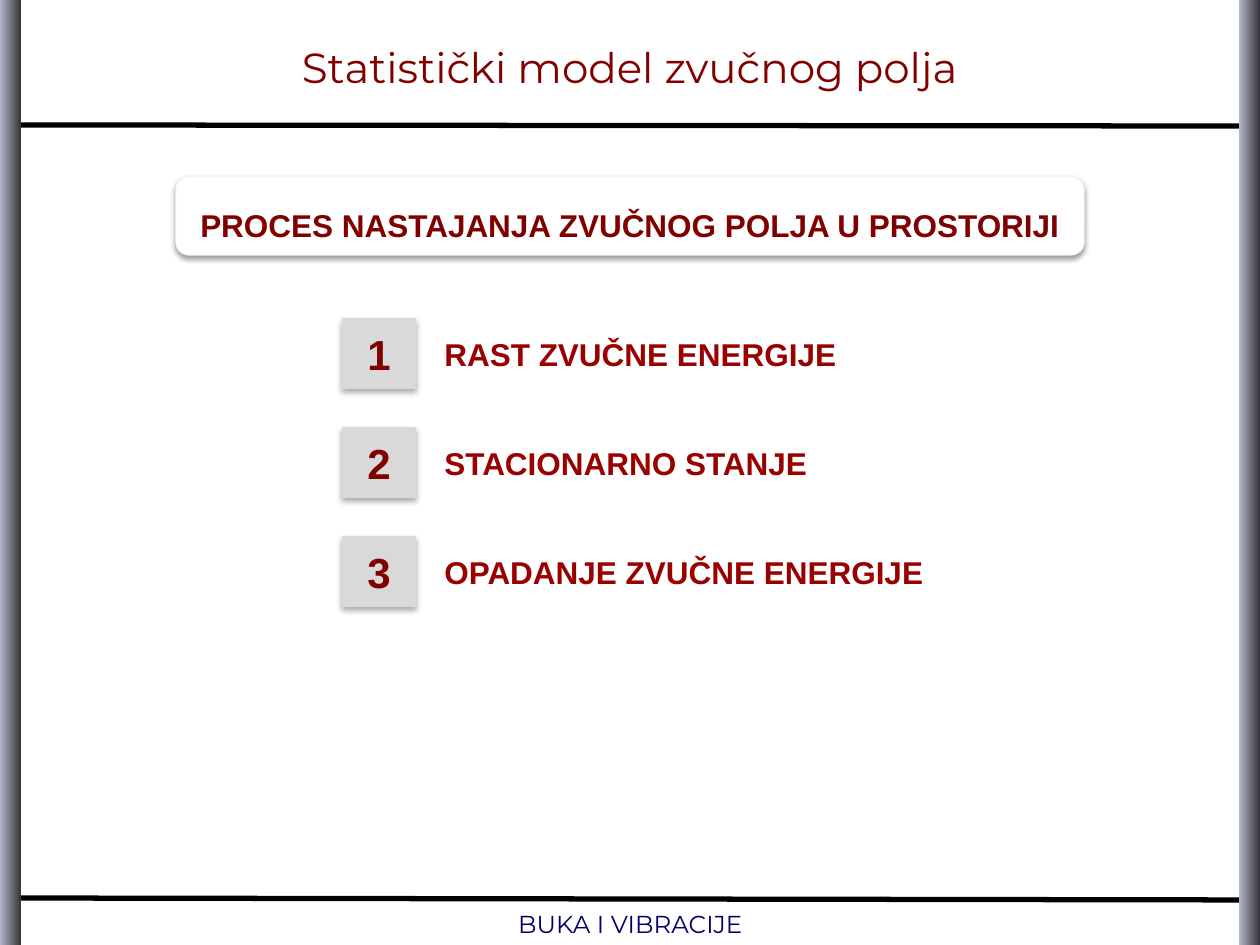
from lxml.etree import SubElement
from pptx import Presentation
from pptx.dml.color import RGBColor
from pptx.enum.shapes import MSO_CONNECTOR, MSO_SHAPE
from pptx.enum.text import MSO_ANCHOR, PP_ALIGN
from pptx.oxml.ns import qn
from pptx.util import Emu, Pt

PX_PER_INCH = 126


def px(n):
    return Emu(round(n * 914400 / PX_PER_INCH))


def rgb(color):
    return RGBColor.from_string(color)


class Deck:
    HEAD, BODY = "Montserrat", "Arial"
    DARK, RED, NAVY = "800000", "990000", "000066"

    def __init__(self, w, h):
        self.prs = Presentation()
        self.prs.slide_width, self.prs.slide_height = px(w), px(h)
        self.s = self.prs.slides.add_slide(self.prs.slide_layouts[6])

    def rule(self, x1, y1, x2, y2):
        sp = self.s.shapes.add_connector(
            MSO_CONNECTOR.STRAIGHT, px(x1), px(y1), px(x2), px(y2))
        sp.line.color.rgb = rgb("000000")
        sp.line.width = Pt(3)
        SubElement(sp._element.spPr, qn("a:effectLst"))

    def shape(self, kind, x, y, w, h):
        sp = self.s.shapes.add_shape(kind, px(x), px(y), px(w), px(h))
        sp.shadow.inherit = False
        sp.line.fill.background()
        return sp

    def side_bar(self, x, y, w, h):
        fill = self.shape(MSO_SHAPE.RECTANGLE, x, y, w, h).fill
        fill.gradient()
        fill.gradient_angle = 0
        for stop, color, pos in zip(fill.gradient_stops, ("B5B7CB", "333439"), (0, 1)):
            stop.color.rgb = rgb(color)
            stop.position = pos

    def card(self, kind, x, y, w, h, fill, blur, dist, alpha):
        sp = self.shape(kind, x, y, w, h)
        sp.fill.solid()
        sp.fill.fore_color.rgb = rgb(fill)
        effects = sp._element.spPr.find(qn("a:effectLst"))
        shadow = SubElement(effects, qn("a:outerShdw"), blurRad=str(Pt(blur)),
                            dist=str(Pt(dist)), dir="5400000", rotWithShape="0")
        color = SubElement(shadow, qn("a:srgbClr"), val="000000")
        SubElement(color, qn("a:alpha"), val=str(alpha * 1000))
        return sp

    def set_text(self, sp, text, font, size, color, bold=False,
                 align=PP_ALIGN.CENTER, spacing=None):
        tf = sp.text_frame
        tf.word_wrap = True
        tf.vertical_anchor = MSO_ANCHOR.MIDDLE
        p = tf.paragraphs[0]
        p.text = text
        p.alignment = align
        if spacing:
            p.line_spacing = spacing
        p.font.name, p.font.size, p.font.bold = font, Pt(size), bold
        p.font.color.rgb = rgb(color)

    def text(self, x, y, w, h, *args, **style):
        sp = self.s.shapes.add_textbox(px(x), px(y), px(w), px(h))
        self.set_text(sp, *args, **style)

    def banner(self, x, y, w, h, text):
        sp = self.card(MSO_SHAPE.ROUNDED_RECTANGLE, x, y, w, h, "FFFFFF", 3.1, 1.6, 38)
        sp.line.color.rgb = rgb("F9F9F9")
        sp.line.width = Pt(0.75)
        self.set_text(sp, text, self.BODY, 18, self.DARK, bold=True, spacing=1.5)

    def step(self, y, number, text):
        sp = self.card(MSO_SHAPE.RECTANGLE, 342, y, 74, 71, "D9D9D9", 3.5, 2.2, 32)
        self.set_text(sp, str(number), self.BODY, 24, self.DARK, bold=True)
        self.text(432, y + 10, 557, 51, text, self.BODY, 18, self.RED,
                  bold=True, align=PP_ALIGN.JUSTIFY)


def main():
    deck = Deck(1260, 945)

    # Frame: rules and side bars
    deck.rule(0, 898, 1257, 900)
    deck.rule(0, 125, 1257, 126)
    for x in (0, 1239):
        deck.side_bar(x, 0, 21, 945)

    # Title and footer
    deck.text(59, 17, 1141, 100, "Statistički model zvučnog polja",
              deck.HEAD, 24, deck.DARK)
    deck.text(25, 909, 1211, 30, "BUKA I VIBRACIJE", deck.HEAD, 14, deck.NAVY)

    # Process heading and its numbered steps
    deck.banner(176, 177, 908, 78, "PROCES NASTAJANJA ZVUČNOG POLJA U PROSTORIJI")
    steps = ("RAST ZVUČNE ENERGIJE", "STACIONARNO STANJE", "OPADANJE ZVUČNE ENERGIJE")
    for i, text in enumerate(steps):
        deck.step(318 + 109 * i, i + 1, text)

    deck.prs.save("out.pptx")


if __name__ == "__main__":
    main()
